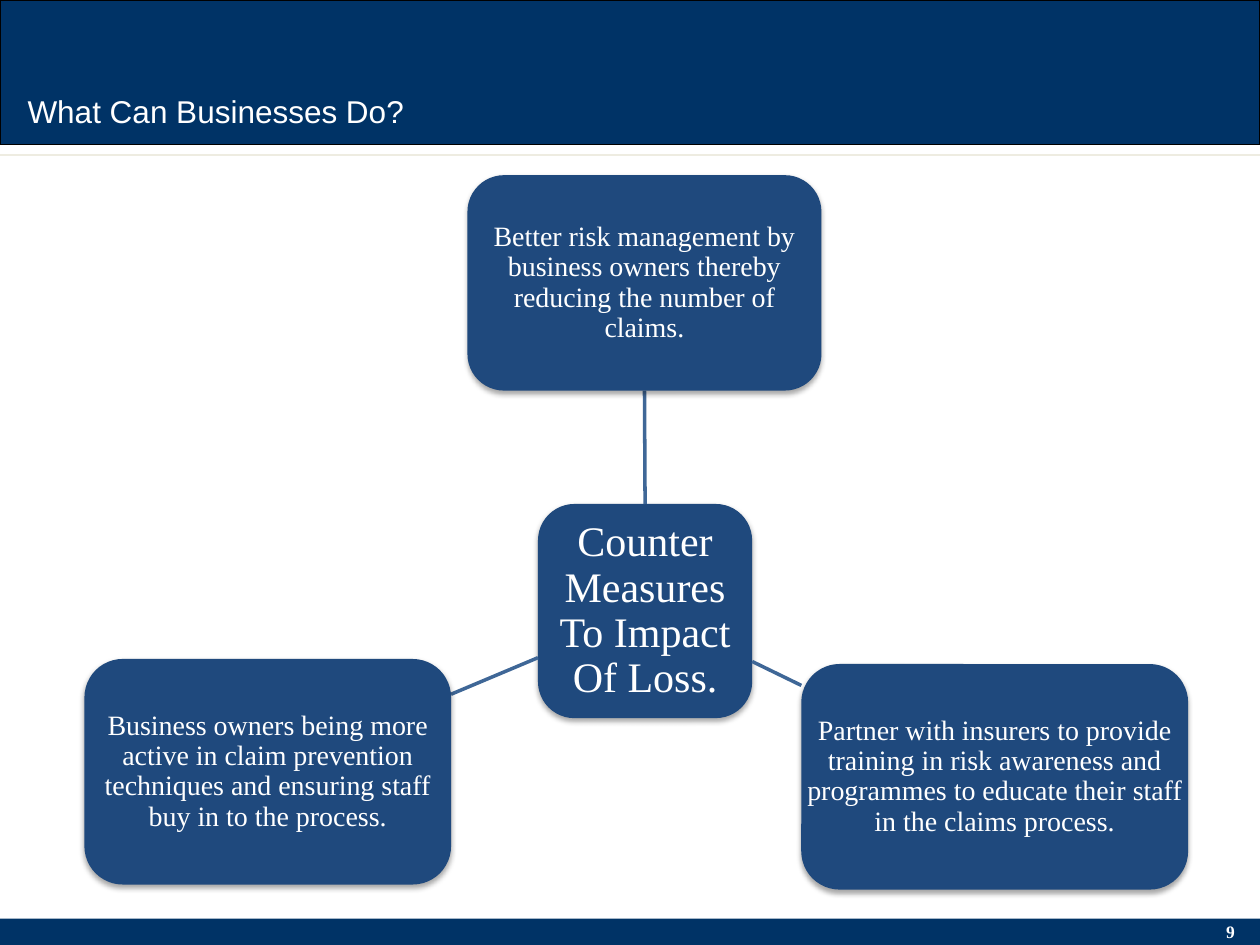
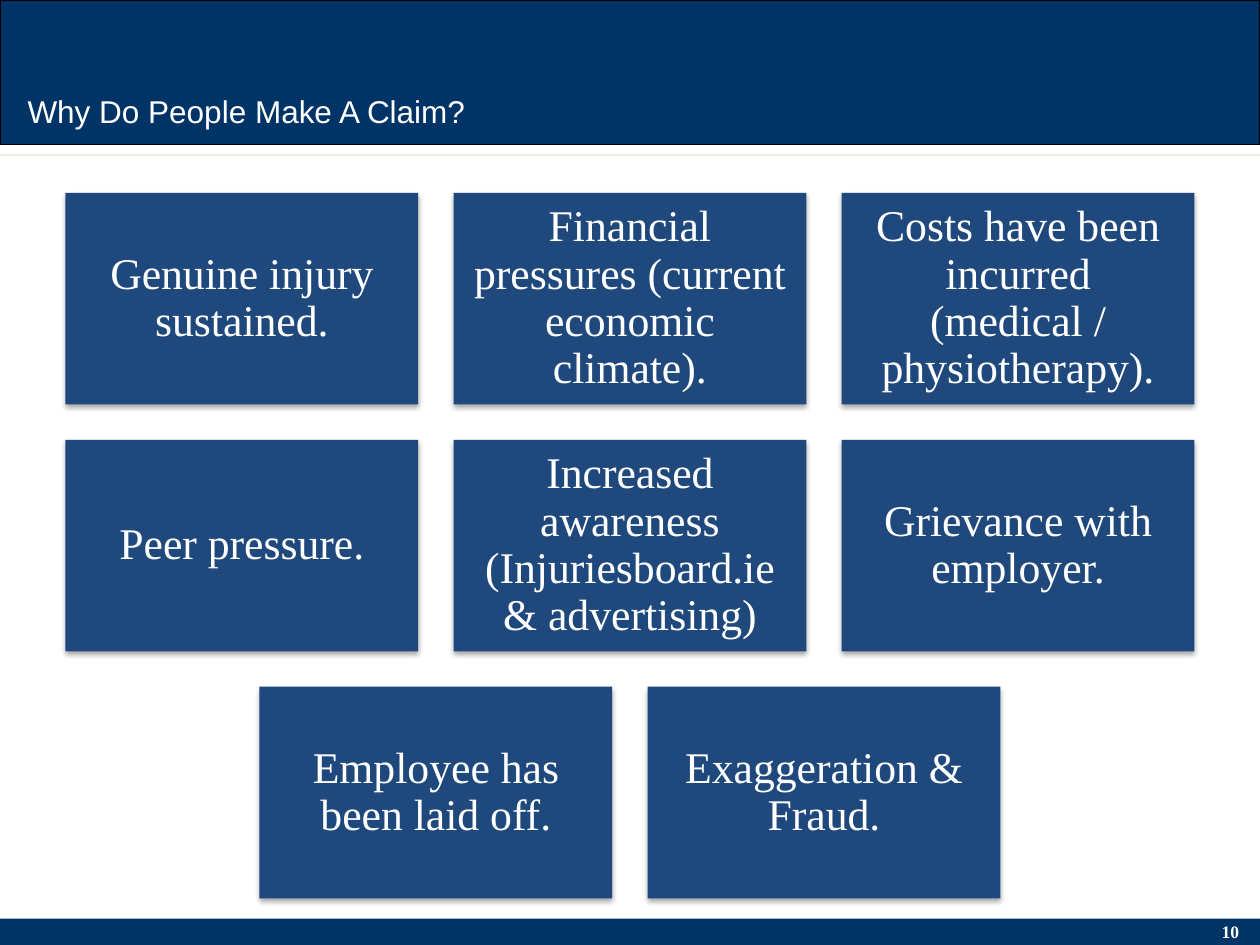
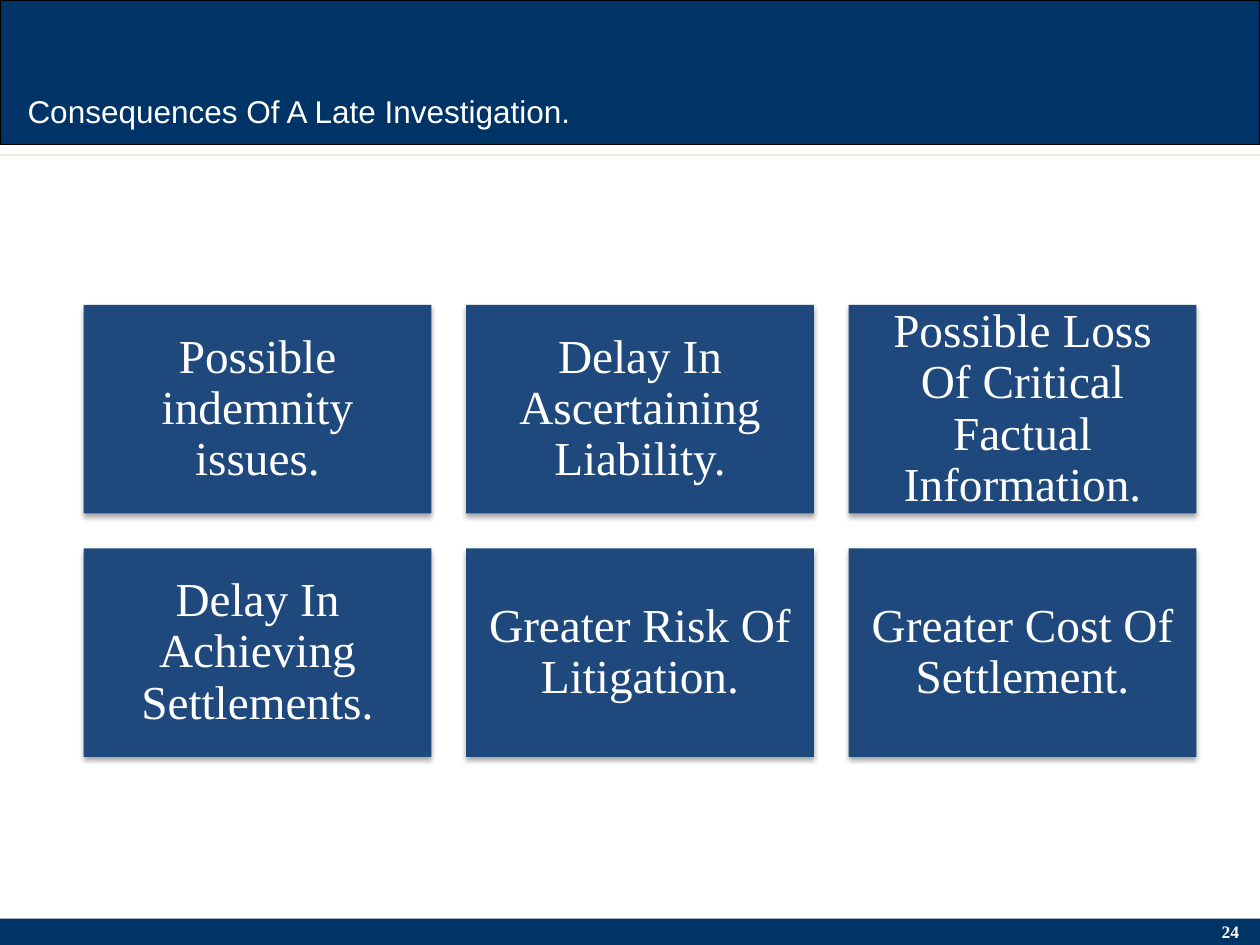
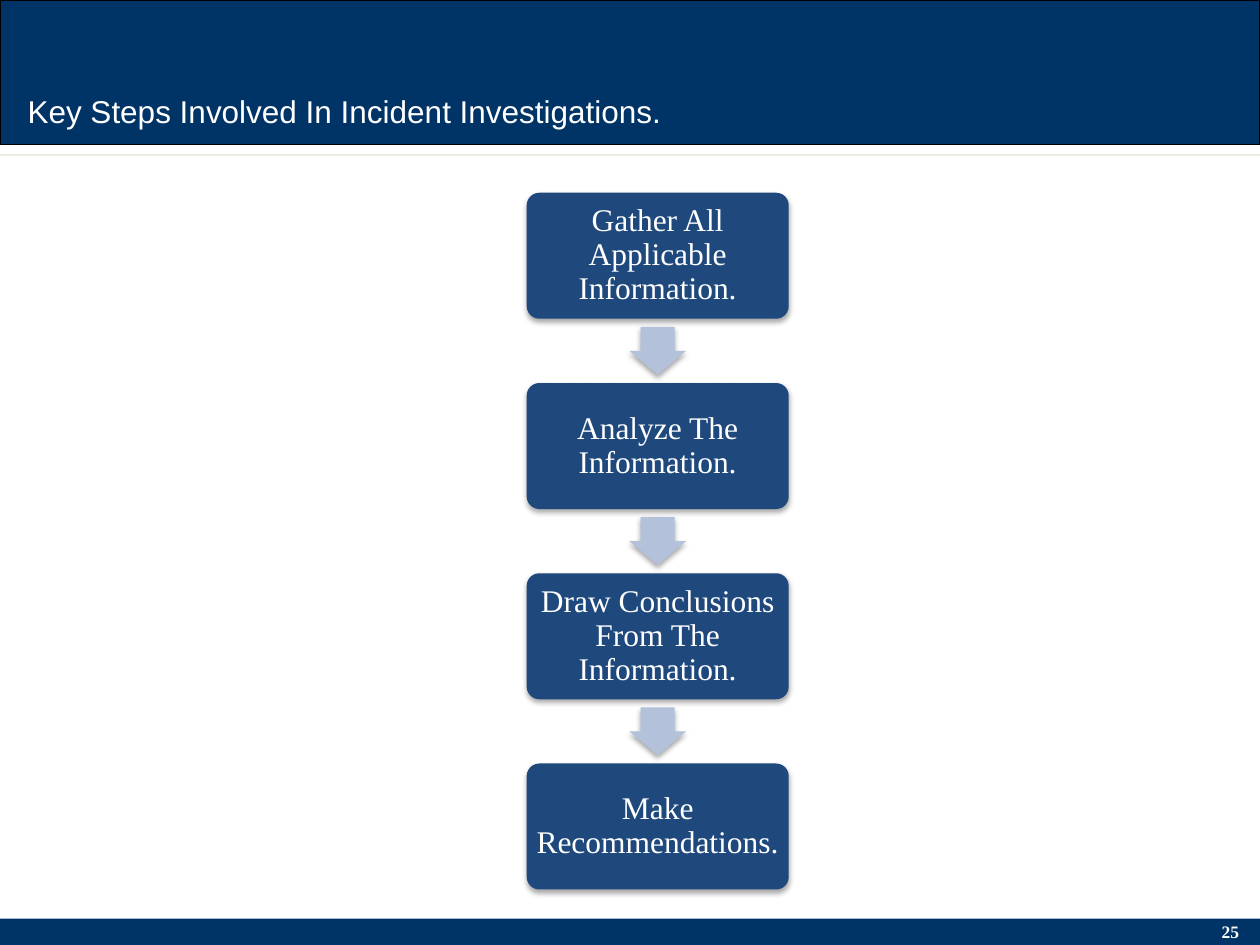
from lxml import etree
from pptx import Presentation
from pptx.dml.color import RGBColor
from pptx.enum.shapes import MSO_CONNECTOR, MSO_SHAPE as SHAPE
from pptx.enum.text import MSO_ANCHOR as ANCHOR, PP_ALIGN as ALIGN
from pptx.oxml.ns import qn
from pptx.util import Inches, Pt

NAVY = RGBColor(0x00, 0x33, 0x66)
BLUE = RGBColor(0x1F, 0x49, 0x7D)
SPOKE = RGBColor(0x3F, 0x67, 0x97)
PALE = RGBColor(0xB3, 0xC1, 0xDB)
CREAM = RGBColor(0xEE, 0xEC, 0xE1)
BLACK = RGBColor(0, 0, 0)
WHITE = RGBColor(0xFF, 0xFF, 0xFF)
SERIF, SANS = "Times New Roman", "Arial"
SLIDE_W, SLIDE_H = 10, 7.5
CORNER = 0.17      # corner radius as a share of the shorter side
CORNER_TEXT = 0.29  # share of the radius that a rounded box keeps free of text


def add_run(p, text, size, font=SERIF, bold=False):
    r = p.add_run()
    r.text = text
    r.font.size, r.font.name, r.font.bold = Pt(size), font, bold
    r.font.color.rgb = WHITE


def add_label(slide, text, box, size, align=ALIGN.LEFT, **font):
    sp = slide.shapes.add_textbox(*map(Inches, box))
    tf = sp.text_frame
    tf.word_wrap = True
    tf.paragraphs[0].alignment = align
    add_run(tf.paragraphs[0], text, size, **font)


def add_box(slide, kind, box, fill, line=None):
    sp = slide.shapes.add_shape(kind, *map(Inches, box))
    sp.shadow.inherit = False
    sp.fill.solid()
    sp.fill.fore_color.rgb = fill
    if line is None:
        sp.line.fill.background()
    else:
        sp.line.color.rgb, sp.line.width = line, Pt(0.75)
    return sp


def add_shadow(sp):
    """Soft shadow straight below the shape."""
    effects = sp._element.spPr.find(qn("a:effectLst"))
    shadow = etree.SubElement(
        effects, qn("a:outerShdw"), blurRad=str(Pt(3.1)), dist=str(Pt(1.8)),
        dir="5400000", rotWithShape="0")
    color = etree.SubElement(shadow, qn("a:srgbClr"), val=str(BLACK))
    etree.SubElement(color, qn("a:alpha"), val="35000")


def add_card(slide, text, box, size, pad, corner=0):
    """Blue box with centred text; pad is measured from the box edge."""
    sp = add_box(slide, SHAPE.ROUNDED_RECTANGLE if corner else SHAPE.RECTANGLE,
                 box, BLUE)
    if corner:
        sp.adjustments[0] = corner
    add_shadow(sp)
    tf = sp.text_frame
    tf.word_wrap, tf.vertical_anchor = True, ANCHOR.MIDDLE
    inset = Inches(pad - CORNER_TEXT * corner * min(box[2:]))
    tf.margin_left = tf.margin_right = tf.margin_top = tf.margin_bottom = inset
    p = tf.paragraphs[0]
    p.alignment, p.line_spacing = ALIGN.CENTER, 0.9
    add_run(p, text, size)
    return sp


def add_line(slide, start, end, color, width):
    cx = slide.shapes.add_connector(MSO_CONNECTOR.STRAIGHT,
                                    *map(Inches, (*start, *end)))
    cx.line.color.rgb, cx.line.width = color, Pt(width)
    etree.SubElement(cx._element.spPr, qn("a:effectLst"))
    return cx


def add_slide(prs, title, number):
    """Blank slide with the header band, rule, footer band and number."""
    slide = prs.slides.add_slide(prs.slide_layouts[6])
    add_box(slide, SHAPE.RECTANGLE, (0, 0, SLIDE_W, 1.15), NAVY, BLACK)
    add_box(slide, SHAPE.RECTANGLE, (0, SLIDE_H - 0.21, SLIDE_W, 0.21), NAVY)
    add_line(slide, (0, 1.23), (SLIDE_W, 1.23), CREAM, 1.5)
    add_label(slide, str(number), (9.57, 7.26, 0.39, 0.27), 10, ALIGN.CENTER,
              bold=True)
    add_label(slide, title, (0.12, 0.68, 5.75, 0.4), 18, font=SANS)
    return slide


def add_card_grid(slide, rows, center, top, width, size, pad):
    """Rows of 5:3 cards, each row centred, with gaps of a tenth of a card."""
    height, gap = 0.6 * width, 0.1 * width
    for i, row in enumerate(rows):
        left = center - (len(row) * (width + gap) - gap) / 2
        for j, text in enumerate(row):
            box = (left + j * (width + gap), top + i * (height + gap),
                   width, height)
            add_card(slide, text, box, size, pad)


def add_hub(slide, text, hub_box, spokes):
    """Central card and outer cards, each tied to the hub by a line."""
    hub = add_card(slide, text, hub_box, 24, 0.07, CORNER)
    for label, box, start, end, sites in spokes:
        line = add_line(slide, start, end, SPOKE, 2)
        card = add_card(slide, label, box, 16, 0.04, CORNER)
        if sites:
            line.begin_connect(hub, sites[0])
            line.end_connect(card, sites[1])


def add_steps(slide, steps, left, top, width, height, gap):
    """Column of cards with an arrow in the middle of every gap."""
    arrow_w, arrow_h = 0.45, 0.38
    for i, text in enumerate(steps):
        y = top + i * (height + gap)
        if i:
            arrow = add_box(slide, SHAPE.DOWN_ARROW,
                            (left + (width - arrow_w) / 2,
                             y - (gap + arrow_h) / 2, arrow_w, arrow_h), PALE)
            arrow.adjustments[0], arrow.adjustments[1] = 0.6, 0.5
            add_shadow(arrow)
        add_card(slide, text, (left, y, width, height), 18, 0.07, 0.1)


def main():
    prs = Presentation()
    prs.slide_width, prs.slide_height = Inches(SLIDE_W), Inches(SLIDE_H)

    # Hub with three measures
    slide = add_slide(prs, "What Can Businesses Do?", 9)
    add_hub(slide, "Counter Measures To Impact Of Loss.", (4.27, 4, 1.7, 1.7), [
        ("Better risk management by business owners thereby reducing the "
         "number of claims.",
         (3.71, 1.39, 2.81, 1.71), (5.12, 4), (5.12, 3.1), (0, 2)),
        ("Partner with insurers to provide training in risk awareness and "
         "programmes to educate their staff in the claims process.",
         (6.36, 5.27, 3.07, 1.79), (5.97, 5.25), (6.36, 5.44), None),
        ("Business owners being more active in claim prevention techniques "
         "and ensuring staff buy in to the process.",
         (0.67, 5.23, 2.91, 1.79), (4.27, 5.22), (3.58, 5.51), None),
    ])

    # Reasons for a claim
    slide = add_slide(prs, "Why Do People Make A Claim?", 10)
    add_card_grid(slide, [
        ["Genuine injury sustained.",
         "Financial pressures (current economic climate).",
         "Costs have been incurred (medical / physiotherapy)."],
        ["Peer pressure.",
         "Increased awareness (Injuriesboard.ie & advertising)",
         "Grievance with employer."],
        ["Employee has been laid off.", "Exaggeration & Fraud."],
    ], center=5, top=1.53, width=2.8, size=25, pad=0.1)

    # Consequences of delay
    slide = add_slide(prs, "Consequences Of A Late Investigation.", 24)
    add_card_grid(slide, [
        ["Possible indemnity issues.",
         "Delay In Ascertaining Liability.",
         "Possible Loss Of Critical Factual Information."],
        ["Delay In Achieving Settlements.",
         "Greater Risk Of Litigation.",
         "Greater Cost Of Settlement."],
    ], center=5.08, top=2.42, width=2.76, size=27, pad=0.11)

    # Investigation steps
    slide = add_slide(prs, "Key Steps Involved In Incident Investigations.", 25)
    add_steps(slide, [
        "Gather All Applicable Information.",
        "Analyze The Information.",
        "Draw Conclusions From The Information.",
        "Make Recommendations.",
    ], left=4.18, top=1.53, width=2.08, height=1, gap=0.51)

    prs.save("out.pptx")


if __name__ == "__main__":
    main()
